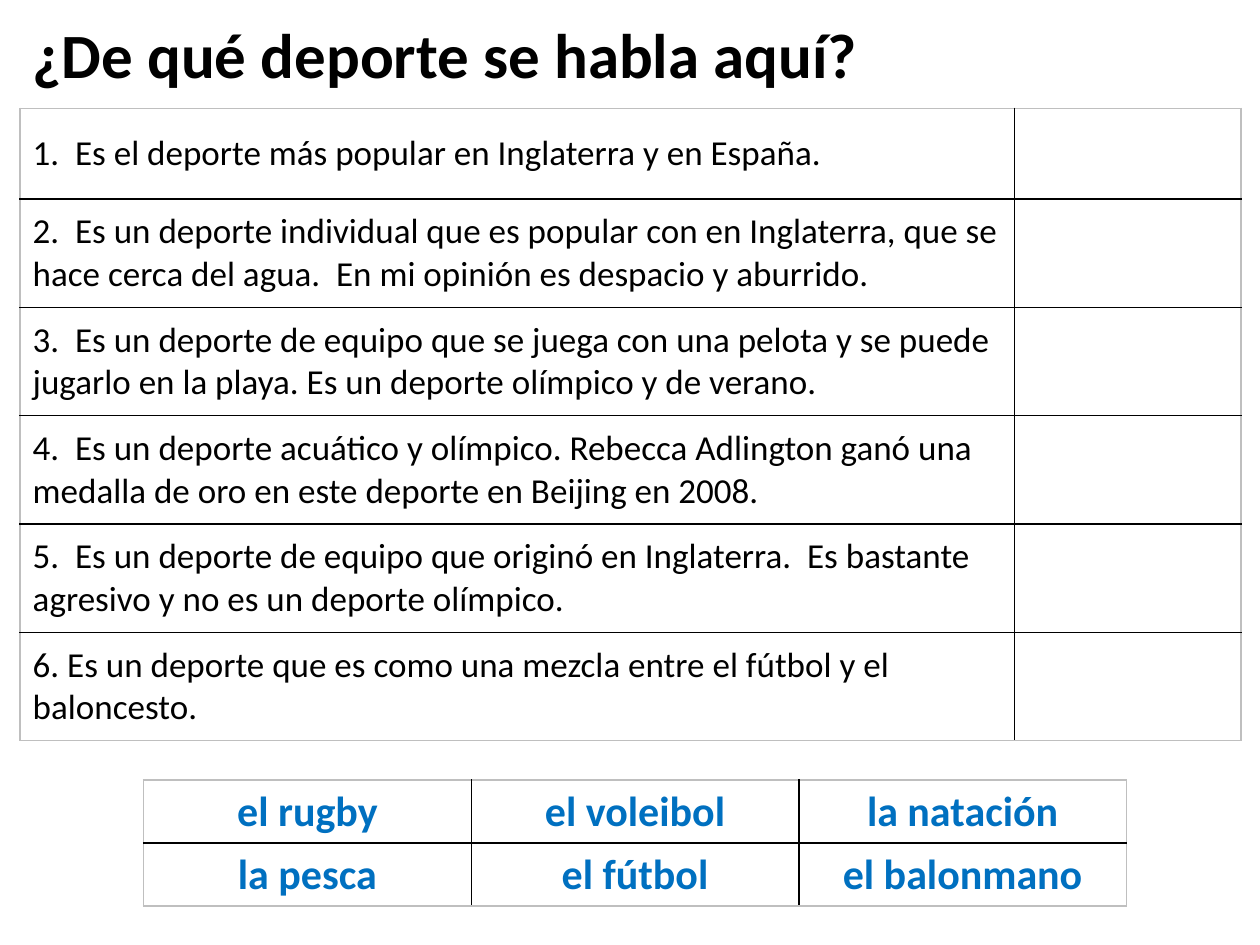
import pptx
import pptx.util
import pptx.dml.color
import pptx.enum.text
import pptx.oxml
import pptx.oxml.ns

Inches = pptx.util.Inches
Pt = pptx.util.Pt
Align = pptx.enum.text.PP_ALIGN
Anchor = pptx.enum.text.MSO_ANCHOR

FONT = "Calibri"
COLORS = {"text": "000000", "word": "0070C0", "inner": "000000", "outer": "BFBFBF"}

CLUES = [
    "1.  Es el deporte más popular en Inglaterra y en España.",
    "2.  Es un deporte individual que es popular con en Inglaterra, que se "
    "hace cerca del agua.  En mi opinión es despacio y aburrido.",
    "3.  Es un deporte de equipo que se juega con una pelota y se puede "
    "jugarlo en la playa. Es un deporte olímpico y de verano.",
    "4.  Es un deporte acuático y olímpico. Rebecca Adlington ganó una "
    "medalla de oro en este deporte en Beijing en 2008.",
    "5.  Es un deporte de equipo que originó en Inglaterra.  Es bastante "
    "agresivo y no es un deporte olímpico.",
    "6. Es un deporte que es como una mezcla entre el fútbol y el baloncesto.",
]
SPORTS = [
    ["el rugby", "el voleibol", "la natación"],
    ["la pesca", "el fútbol", "el balonmano"],
]


def write(frame, text, size, color, bold=False, align=Align.LEFT):
    para = frame.paragraphs[0]
    para.alignment = align
    run = para.add_run()
    run.text = text
    run.font.name = FONT
    run.font.size = Pt(size)
    run.font.bold = bold
    run.font.color.rgb = pptx.dml.color.RGBColor.from_string(COLORS[color])


def add_borders(cell, outer):
    """Draw all four sides; those named in outer get the frame colour."""
    props = cell._tc.get_or_add_tcPr()
    for place, side in enumerate("LRTB"):
        color = COLORS["outer" if side in outer else "inner"]
        line = pptx.oxml.parse_xml(
            f'<a:ln{side} {pptx.oxml.ns.nsdecls("a")} w="{Pt(1)}">'
            f'<a:solidFill><a:srgbClr val="{color}"/></a:solidFill></a:ln{side}>'
        )
        props.insert(place, line)


def add_grid(slide, left, top, widths, heights, texts, **style):
    """Add a plain ruled table; empty texts stay blank cells."""
    rows, cols = len(heights), len(widths)
    frame = slide.shapes.add_table(
        rows, cols, Inches(left), Inches(top),
        Inches(sum(widths)), Inches(sum(heights)),
    )
    table = frame.table
    table.first_row = table.horz_banding = False
    for col, width in zip(table.columns, widths):
        col.width = Inches(width)
    for row, height in zip(table.rows, heights):
        row.height = Inches(height)
    for r, line in enumerate(texts):
        for c, text in enumerate(line):
            cell = table.cell(r, c)
            cell.fill.background()
            cell.vertical_anchor = Anchor.MIDDLE
            edges = {"L": c == 0, "R": c == cols - 1, "T": r == 0, "B": r == rows - 1}
            add_borders(cell, [side for side, edge in edges.items() if edge])
            if text:
                write(cell.text_frame, text, **style)


def add_title(slide, left, top, width, height):
    box = slide.shapes.add_textbox(
        Inches(left), Inches(top), Inches(width), Inches(height)
    )
    box.text_frame.word_wrap = True
    write(box.text_frame, "¿De qué deporte se habla aquí?", 36, "text", bold=True)


def add_clues(slide, left, top):
    add_grid(slide, left, top, [7.89, 1.8], [0.72] + [0.86] * 5,
             [[clue, ""] for clue in CLUES], size=20, color="text")


def add_bank(slide, left, top):
    """Place the bank of answer words."""
    add_grid(slide, left, top, [2.6] * 3, [0.5] * 2, SPORTS,
             size=24, color="word", bold=True, align=Align.CENTER)


def main():
    deck = pptx.Presentation()
    deck.slide_width, deck.slide_height = Inches(10), Inches(7.5)
    slide = deck.slides.add_slide(deck.slide_layouts[6])
    add_clues(slide, 0.16, 0.86)
    add_title(slide, 0.16, 0.07, 9.61, 0.71)
    add_bank(slide, 1.14, 6.19)
    deck.save("out.pptx")


if __name__ == "__main__":
    main()
